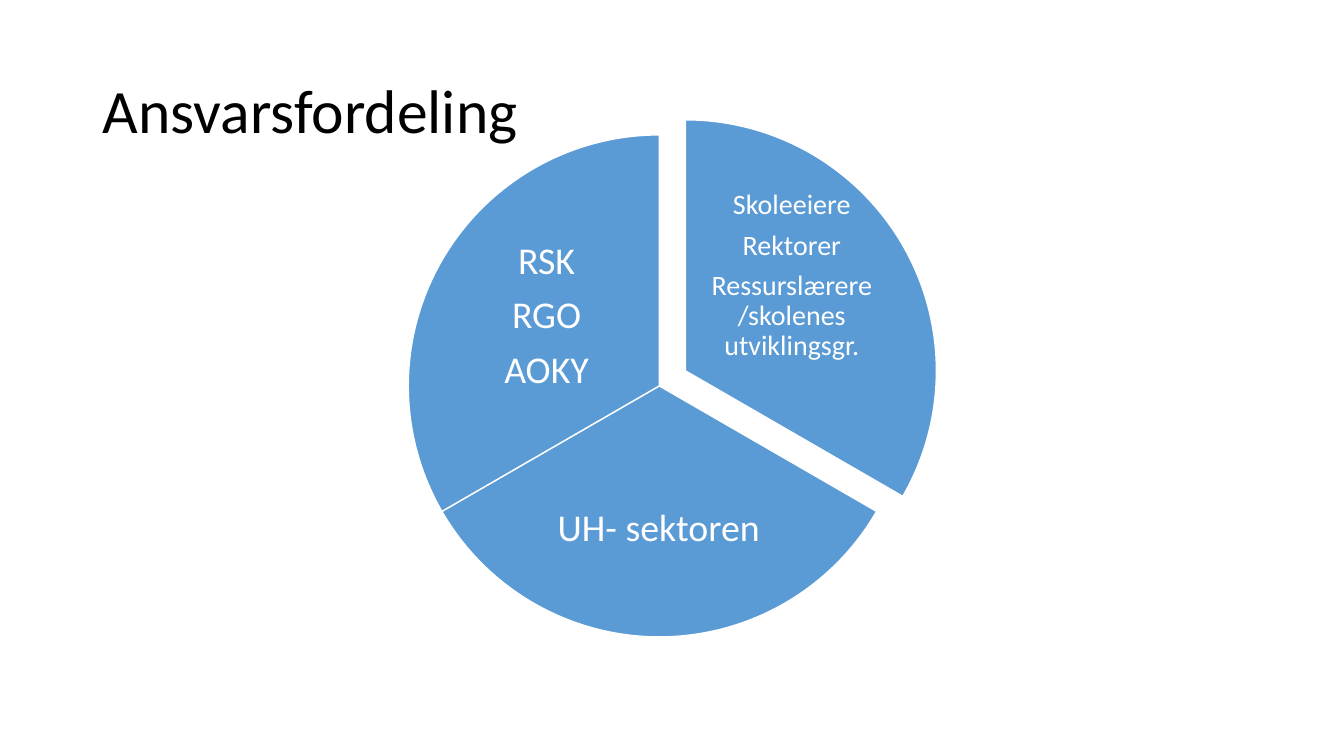
from dataclasses import dataclass

from pptx import Presentation
from pptx.dml.color import RGBColor
from pptx.enum.lang import MSO_LANGUAGE_ID as LANG
from pptx.enum.shapes import MSO_SHAPE as SHAPE
from pptx.enum.text import MSO_ANCHOR as ANCHOR, PP_ALIGN as ALIGN
from pptx.slide import Slide
from pptx.util import Cm, Pt

WHITE, BLACK, BLUE = "FFFFFF", "000000", "5B9BD5"
DIAMETER = 12.65
PIE_LEFT, PIE_TOP = 10.29, 3.4


@dataclass
class Label:
    lines: list[str]
    box: tuple[float, float, float, float]
    size: float
    color: str = WHITE
    align: ALIGN = ALIGN.CENTER
    inset: float = 0.1
    lift: float = 0
    space: float = 0.35


@dataclass
class Slice:
    start: float
    label: Label
    shift: tuple[float, float] = (0, 0)


TITLE = Label(["Ansvarsfordeling"], (2.34, 1.02, 29.21, 3.68), 44,
              BLACK, ALIGN.LEFT, inset=0.25, space=0)
SLICES = [
    Slice(270, Label(["Skoleeiere", "Rektorer", "Ressurslærere/skolenes utviklingsgr."],
                     (17.81, 5.36, 4.29, 4.22), 20, inset=0.08, lift=1.02), (0.66, -0.38)),
    Slice(30, Label(["UH- sektoren"], (13.74, 11.38, 5.72, 3.91), 27)),
    Slice(150, Label(["RSK", "RGO", "AOKY"], (11.63, 5.87, 4.29, 4.22), 27)),
]


def rgb(value: str) -> RGBColor:
    return RGBColor.from_string(value)


def add_label(s: Slide, label: Label) -> None:
    tf = s.shapes.add_textbox(*map(Cm, label.box)).text_frame
    tf.word_wrap = True
    tf.vertical_anchor = ANCHOR.MIDDLE
    tf.margin_left = tf.margin_right = Cm(label.inset)
    tf.margin_top = Cm(min(label.inset, 0.13))
    tf.margin_bottom = tf.margin_top + Cm(label.lift)
    for i, line in enumerate(label.lines):
        p = tf.add_paragraph() if i else tf.paragraphs[0]
        p.alignment = label.align
        p.line_spacing = 0.9
        p.space_after = Pt(label.space * label.size)
        r = p.add_run()
        r.text = line
        r.font.name = "Calibri"
        r.font.size = Pt(label.size)
        r.font.color.rgb = rgb(label.color)
        r.font.language_id = LANG.NORWEGIAN_BOKMOL


def add_slice(s: Slide, part: Slice) -> None:
    dx, dy = part.shift
    sp = s.shapes.add_shape(SHAPE.PIE, Cm(PIE_LEFT + dx), Cm(PIE_TOP + dy),
                            Cm(DIAMETER), Cm(DIAMETER))
    sp.adjustments[0] = part.start * 0.6
    sp.adjustments[1] = (part.start + 120) % 360 * 0.6
    sp.shadow.inherit = False
    sp.fill.solid()
    sp.fill.fore_color.rgb = rgb(BLUE)
    sp.line.color.rgb = rgb(WHITE)
    sp.line.width = Pt(1)
    add_label(s, part.label)


def main() -> None:
    prs = Presentation()
    prs.slide_width, prs.slide_height = Cm(33.87), Cm(19.05)
    s = prs.slides.add_slide(prs.slide_layouts[6])
    add_label(s, TITLE)
    for part in SLICES:
        add_slice(s, part)
    prs.save("out.pptx")


if __name__ == "__main__":
    main()
